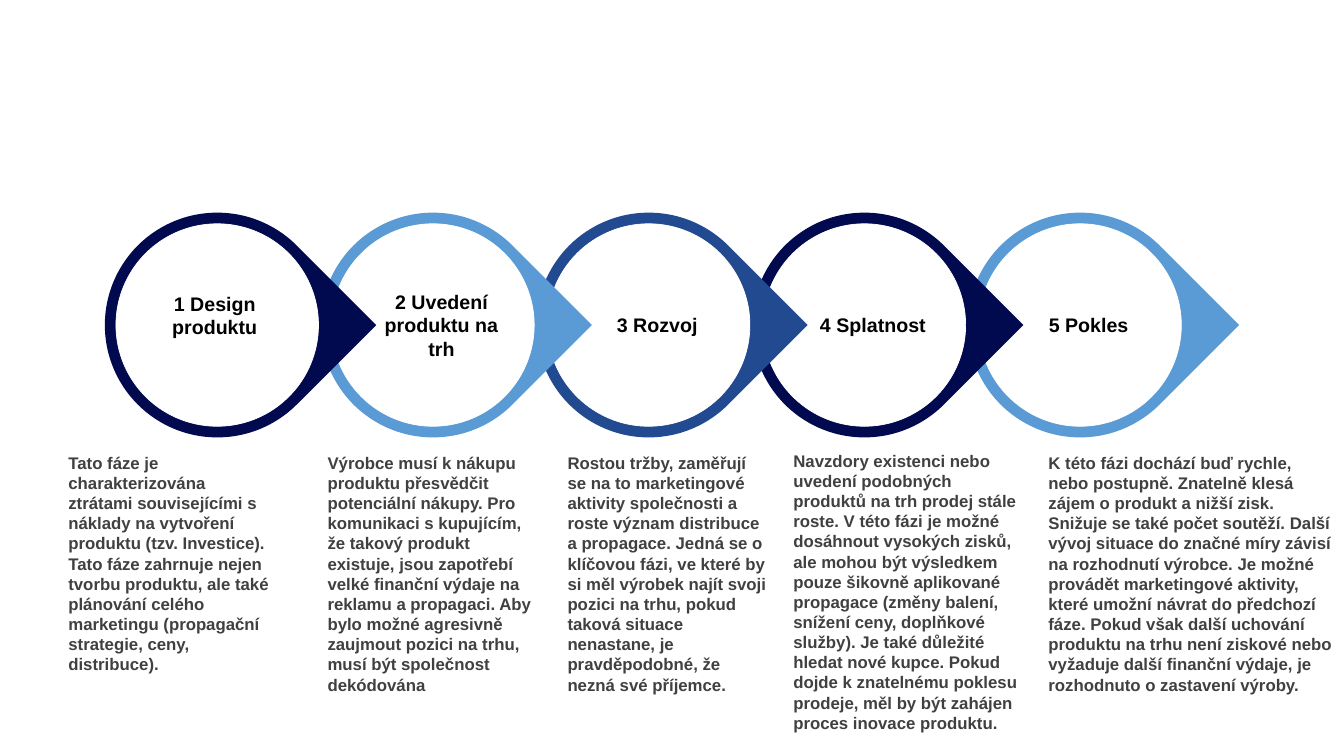
"""Build a slide showing the five phases of the product life cycle."""
from dataclasses import dataclass

from pptx import Presentation
from pptx.dml.color import RGBColor
from pptx.enum.shapes import MSO_SHAPE
from pptx.enum.text import MSO_ANCHOR, MSO_AUTO_SIZE, PP_ALIGN
from pptx.shapes.autoshape import Shape
from pptx.slide import Slide
from pptx.util import Inches, Pt

TEARDROP, CIRCLE = MSO_SHAPE.TEAR, MSO_SHAPE.OVAL
LEFT, CENTER = PP_ALIGN.LEFT, PP_ALIGN.CENTER
TOP, MIDDLE = MSO_ANCHOR.TOP, MSO_ANCHOR.MIDDLE
FIT_SHAPE = MSO_AUTO_SIZE.SHAPE_TO_FIT_TEXT

SLIDE_WIDTH, SLIDE_HEIGHT = Inches(13.33), Inches(7.5)


@dataclass(frozen=True)
class Theme:
    """Colours, font and type sizes of the slide."""

    navy: RGBColor = RGBColor(0x01, 0x0A, 0x4F)
    sky: RGBColor = RGBColor(0x5A, 0x9B, 0xD5)
    royal: RGBColor = RGBColor(0x22, 0x4A, 0x90)
    white: RGBColor = RGBColor(0xFF, 0xFF, 0xFF)
    heading: RGBColor = RGBColor(0x00, 0x00, 0x00)
    body: RGBColor = RGBColor(0x40, 0x40, 0x40)
    font: str = "Arial"
    heading_size: Pt = Pt(14)
    body_size: Pt = Pt(12)
    outline: Pt = Pt(0.5)


@dataclass(frozen=True)
class Box:
    """An area whose sides are percentages of the slide's width and height."""

    left: float
    top: float
    width: float
    height: float

    def emu(self) -> tuple[int, int, int, int]:
        """Return left, top, width and height in slide units."""
        return (across(self.left), down(self.top),
                across(self.width), down(self.height))


@dataclass(frozen=True)
class Phase:
    """One phase: its drop colour, heading and description with its column."""

    color: RGBColor
    heading: str
    heading_lines: int
    description: str
    description_lines: int
    column_left: float
    column_width: float
    column_top: float = 59.2
    heading_inset: float = 3.6
    heading_middle: float = 43.0


THEME = Theme()
DROP_LEFT, DROP_TOP, DROP_SIZE, DROP_PITCH = 7.8, 28.13, 16.73, 16.05
RING_BAND = 0.83
HEADING_WIDTH = 10.8
TEXT_PADDING, HEADING_LINE, BODY_LINE = 1.33, 3.15, 2.69

PHASES = [
    Phase(THEME.navy, "1 Design produktu", 2,
          "Tato fáze je charakterizována ztrátami souvisejícími s náklady na "
          "vytvoření produktu (tzv. Investice). Tato fáze zahrnuje nejen tvorbu "
          "produktu, ale také plánování celého marketingu (propagační strategie, "
          "ceny, distribuce).",
          11, 4.35, 16.73, heading_inset=2.78, heading_middle=41.67),
    Phase(THEME.sky, "2 Uvedení produktu na trh", 3,
          "Výrobce musí k nákupu produktu přesvědčit potenciální nákupy. Pro "
          "komunikaci s kupujícím, že takový produkt existuje, jsou zapotřebí "
          "velké finanční výdaje na reklamu a propagaci. Aby bylo možné "
          "agresivně zaujmout pozici na trhu, musí být společnost dekódována",
          12, 23.63, 16.95),
    Phase(THEME.royal, "3 Rozvoj", 1,
          "Rostou tržby, zaměřují se na to marketingové aktivity společnosti a "
          "roste význam distribuce a propagace. Jedná se o klíčovou fázi, ve "
          "které by si měl výrobek najít svoji pozici na trhu, pokud taková "
          "situace nenastane, je pravděpodobné, že nezná své příjemce.",
          12, 41.49, 16.28),
    Phase(THEME.navy, "4 Splatnost", 1,
          "Navzdory existenci nebo uvedení podobných produktů na trh prodej "
          "stále roste. V této fázi je možné dosáhnout vysokých zisků, ale "
          "mohou být výsledkem pouze šikovně aplikované propagace (změny "
          "balení, snížení ceny, doplňkové služby). Je také důležité hledat "
          "nové kupce. Pokud dojde k znatelnému poklesu prodeje, měl by být "
          "zahájen proces inovace produktu.",
          14, 58.29, 18.45, column_top=58.93),
    Phase(THEME.sky, "5 Pokles", 1,
          "K této fázi dochází buď rychle, nebo postupně. Znatelně klesá zájem "
          "o produkt a nižší zisk. Snižuje se také počet soutěží. Další vývoj "
          "situace do značné míry závisí na rozhodnutí výrobce. Je možné "
          "provádět marketingové aktivity, které umožní návrat do předchozí "
          "fáze. Pokud však další uchování produktu na trhu není ziskové nebo "
          "vyžaduje další finanční výdaje, je rozhodnuto o zastavení výroby.",
          12, 77.27, 22.81),
]


def across(percent: float) -> int:
    """Convert a percentage of the slide's width to slide units."""
    return round(SLIDE_WIDTH * percent / 100)


def down(percent: float) -> int:
    """Convert a percentage of the slide's height to slide units."""
    return round(SLIDE_HEIGHT * percent / 100)


def add_disc(slide: Slide, preset: MSO_SHAPE, inset: float, left: float,
             color: RGBColor) -> Shape:
    """Add a flat square-bounded shape, inset from the drop's bounds."""
    size = across(DROP_SIZE - 2 * inset)
    disc = slide.shapes.add_shape(preset, across(left + inset),
                                  down(DROP_TOP) + across(inset), size, size)
    disc.shadow.inherit = False
    disc.fill.solid()
    disc.fill.fore_color.rgb = color
    return disc


def add_drop(slide: Slide, left: float, color: RGBColor) -> None:
    """Add a drop pointing right with a white disc inside it."""
    drop = add_disc(slide, TEARDROP, 0, left, color)
    drop.rotation = 45
    drop.line.fill.background()
    disc = add_disc(slide, CIRCLE, RING_BAND, left, THEME.white)
    disc.line.color.rgb = THEME.white
    disc.line.width = THEME.outline


def add_text(slide: Slide, box: Box, text: str, size: Pt, color: RGBColor,
             alignment: PP_ALIGN, anchor: MSO_ANCHOR) -> None:
    """Add a bold wrapped paragraph in a text box."""
    frame = slide.shapes.add_textbox(*box.emu()).text_frame
    frame.word_wrap = True
    frame.auto_size = FIT_SHAPE
    frame.vertical_anchor = anchor
    paragraph = frame.paragraphs[0]
    paragraph.text = text
    paragraph.alignment = alignment
    paragraph.font.name = THEME.font
    paragraph.font.size = size
    paragraph.font.bold = True
    paragraph.font.color.rgb = color


def add_phase_text(slide: Slide, drop_left: float, phase: Phase) -> None:
    """Add the heading inside the drop and the description below it."""
    heading_height = TEXT_PADDING + HEADING_LINE * phase.heading_lines
    heading_box = Box(drop_left + phase.heading_inset,
                      phase.heading_middle - heading_height / 2,
                      HEADING_WIDTH, heading_height)
    add_text(slide, heading_box, phase.heading, THEME.heading_size,
             THEME.heading, CENTER, MIDDLE)
    description_box = Box(phase.column_left, phase.column_top, phase.column_width,
                          TEXT_PADDING + BODY_LINE * phase.description_lines)
    add_text(slide, description_box, phase.description, THEME.body_size,
             THEME.body, LEFT, TOP)


def main() -> None:
    """Build and save the presentation."""
    presentation = Presentation()
    presentation.slide_width = SLIDE_WIDTH
    presentation.slide_height = SLIDE_HEIGHT
    slide = presentation.slides.add_slide(presentation.slide_layouts[6])
    placed = [(DROP_LEFT + DROP_PITCH * index, phase)
              for index, phase in enumerate(PHASES)]
    for drop_left, phase in reversed(placed):
        add_drop(slide, drop_left, phase.color)
    for drop_left, phase in placed:
        add_phase_text(slide, drop_left, phase)
    presentation.save("out.pptx")


if __name__ == "__main__":
    main()
